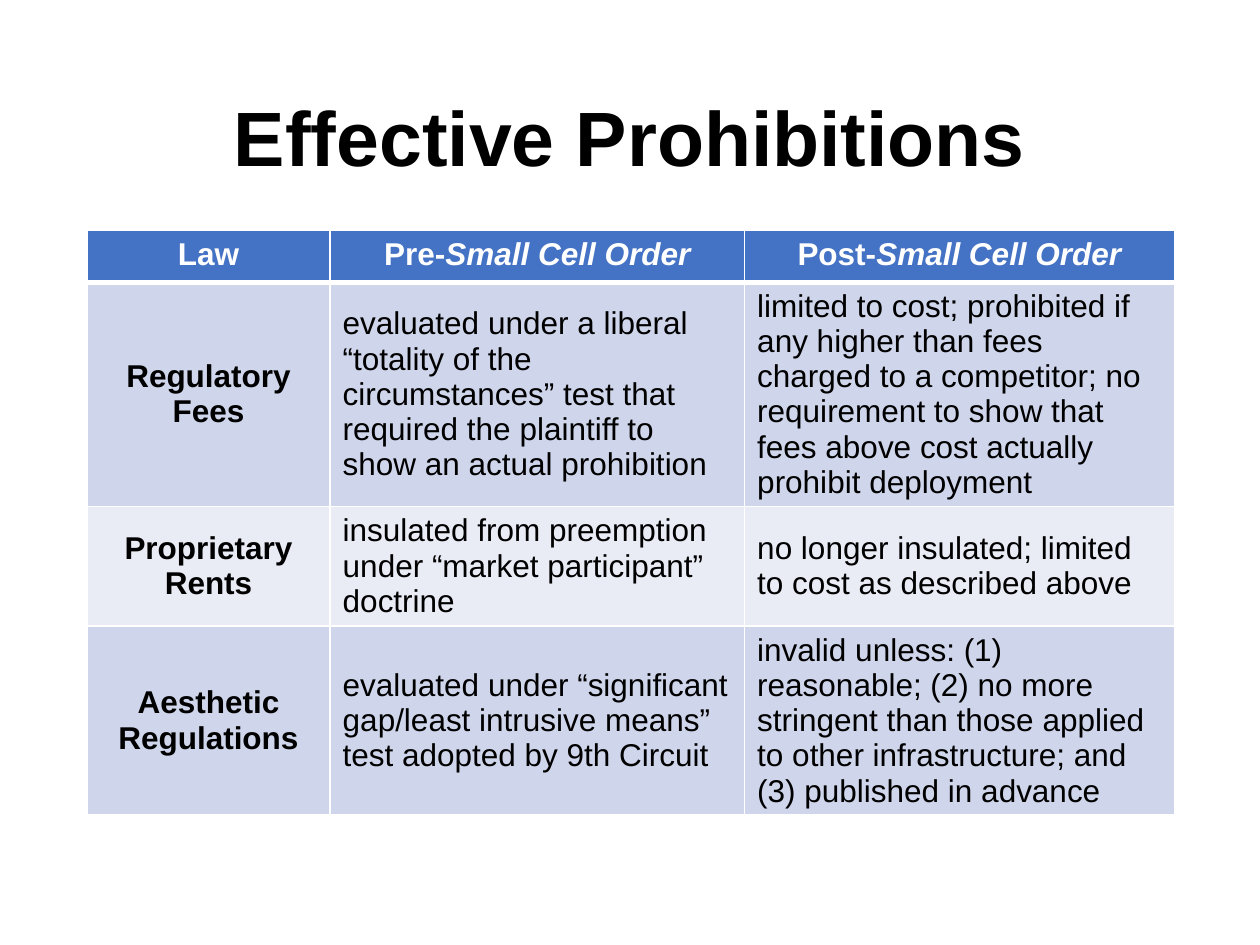
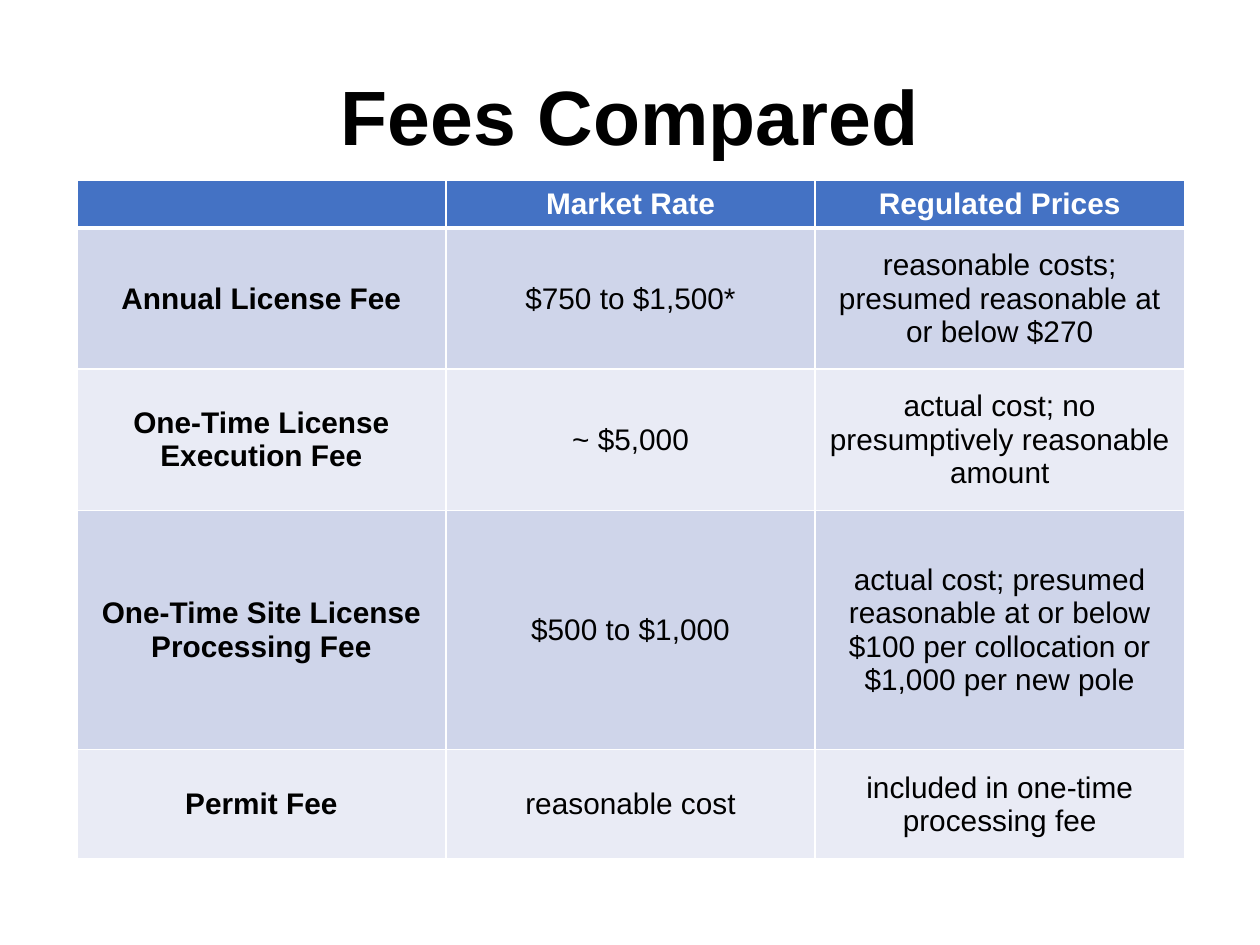
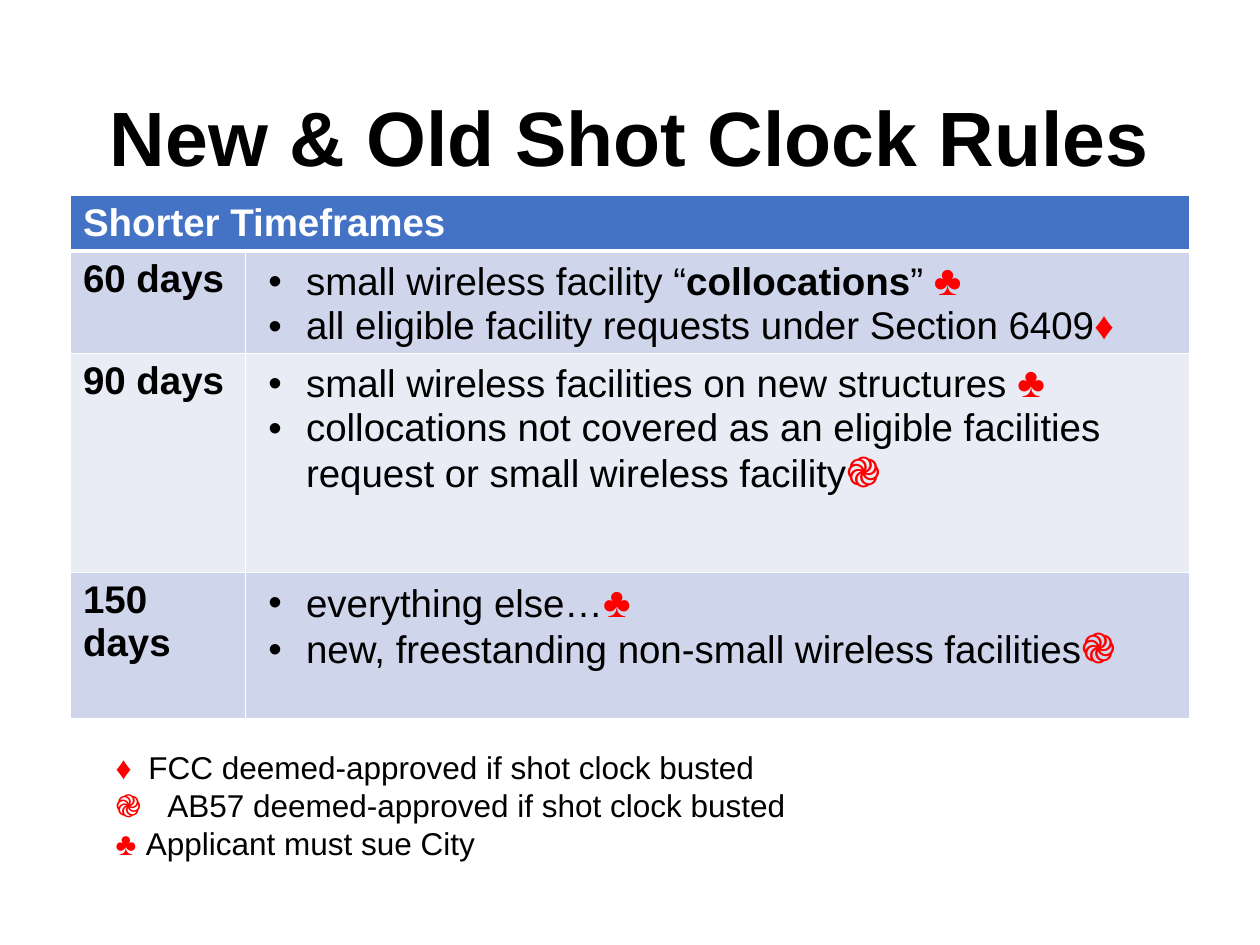
from lxml import etree
from pptx import Presentation
from pptx.dml.color import RGBColor
from pptx.enum.text import MSO_ANCHOR as Anchor, MSO_AUTO_SIZE as Fit, PP_ALIGN as Align
from pptx.oxml.ns import qn
from pptx.util import Inches, Pt

BLACK = RGBColor(0x00, 0x00, 0x00)
WHITE = RGBColor(0xFF, 0xFF, 0xFF)
RED = RGBColor(0xFF, 0x00, 0x00)
BLUE = RGBColor(0x44, 0x72, 0xC4)
BANDS = RGBColor(0xCF, 0xD5, 0xEA), RGBColor(0xE9, 0xEB, 0xF5)
FONT = "Arial"

# A text is a string, or a list of strings and (string, format) runs.
ITALIC = {"italic": True}
BOLD = {"bold": True}
MARK = {"bold": True, "size": Pt(24), "color": RED}
SMALL = {"bold": True, "color": RED}
CLUB, STAR, GEM = ("♣", MARK), ("֎", MARK), ("♦", SMALL)

LAWS = [
    ("Law", ["Pre-", ("Small Cell Order", ITALIC)], ["Post-", ("Small Cell Order", ITALIC)]),
    ("Regulatory Fees",
     "evaluated under a liberal “totality of the circumstances” test that required "
     "the plaintiff to show an actual prohibition",
     "limited to cost; prohibited if any higher than fees charged to a competitor; "
     "no requirement to show that fees above cost actually prohibit deployment"),
    ("Proprietary Rents",
     "insulated from preemption under “market participant” doctrine",
     "no longer insulated; limited to cost as described above"),
    ("Aesthetic Regulations",
     "evaluated under “significant gap/least intrusive means” test adopted by 9th Circuit",
     "invalid unless: (1) reasonable; (2) no more stringent than those applied to "
     "other infrastructure; and (3) published in advance"),
]
FEES = [
    ("", "Market Rate", "Regulated Prices"),
    ("Annual License Fee", "$750 to $1,500*",
     "reasonable costs; presumed reasonable at or below $270"),
    ("One-Time License Execution Fee", "~ $5,000",
     "actual cost; no presumptively reasonable amount"),
    ("One-Time Site License Processing Fee", "$500 to $1,000",
     "actual cost; presumed reasonable at or below $100 per collocation "
     "or $1,000 per new pole"),
    ("Permit Fee", "reasonable cost", "included in one-time processing fee"),
]
# Each right-hand cell holds a tuple of bullets.
CLOCKS = [
    ("Shorter Timeframes", ""),
    ("60 days", (["small wireless facility “", ("collocations", BOLD), "” ", CLUB],
                 ["all eligible facility requests under Section 6409", GEM])),
    ("90 days", (["small wireless facilities on new structures ", CLUB],
                 ["collocations not covered as an eligible facilities request "
                  "or small wireless facility", STAR])),
    ("150 days", (["everything else…", CLUB],
                  ["new, freestanding non-small wireless facilities", STAR])),
]
# Mark, tab stop in inches, meaning
LEGEND = [
    ("♦", 0.26, "FCC deemed-approved if shot clock busted"),
    ("֎", 0.41, "AB57 deemed-approved if shot clock busted"),
    ("♣", 0.24, "Applicant must sue City"),
]
SLIDES = [
    {"title": "Effective Prohibitions", "top": 0.4, "data": LAWS, "at": (0.69, 1.83),
     "cols": (1.93, 3.29, 3.41), "rows": (0.41, 1.78, 0.95, 1.49), "size": 18,
     "anchor": Anchor.MIDDLE, "aligns": (Align.CENTER, Align.LEFT, Align.LEFT),
     "head": (Anchor.TOP, Align.CENTER)},
    {"title": "Fees Compared", "top": 0.23, "data": FEES, "at": (0.61, 1.43),
     "cols": (2.93,) * 3, "rows": (0.38, 1.12, 1.12, 1.9, 0.87), "size": 17,
     "anchor": Anchor.MIDDLE, "aligns": (Align.CENTER,) * 3,
     "head": (Anchor.MIDDLE, Align.CENTER)},
    {"title": "New & Old Shot Clock Rules", "top": 0.4, "data": CLOCKS, "at": (0.56, 1.55),
     "cols": (1.39, 7.49), "rows": (0.43, 0.81, 1.74, 1.16), "size": 22,
     "anchor": Anchor.TOP, "aligns": (Align.LEFT,) * 2,
     "head": (Anchor.TOP, Align.LEFT), "merge": True, "legend": LEGEND},
]


def write(para, text, **base):
    for part in [text] if isinstance(text, str) else text:
        words, extra = (part, {}) if isinstance(part, str) else part
        run = para.add_run()
        run.text = words
        look = {"name": FONT, "bold": False, "color": BLACK, **base, **extra}
        run.font.color.rgb = look.pop("color")
        for key, value in look.items():
            setattr(run.font, key, value)


def add_bullet(para):
    props = para._p.get_or_add_pPr()
    props.set("marL", str(Inches(0.38)))
    props.set("indent", str(Inches(-0.3)))
    etree.SubElement(props, qn("a:buFont"), typeface=FONT)
    etree.SubElement(props, qn("a:buChar"), char="•")


def add_tab(para, stop):
    tabs = etree.SubElement(para._p.get_or_add_pPr(), qn("a:tabLst"))
    etree.SubElement(tabs, qn("a:tab"), pos=str(Inches(stop)), algn="l")


def edge(cell, row):
    """Rule the cell in white, thicker under the header."""
    props = cell._tc.get_or_add_tcPr()
    widths = {"L": 1, "R": 1, "T": 3 if row == 1 else 1, "B": 1 if row else 3}
    for side, width in widths.items():
        line = etree.SubElement(props, qn("a:ln" + side), w=str(Pt(width)))
        fill = etree.SubElement(line, qn("a:solidFill"))
        etree.SubElement(fill, qn("a:srgbClr"), val=str(WHITE))


def add_title(slide, text, top):
    title = slide.shapes.title
    title.left, title.top = Inches(0.69), Inches(top)
    title.width, title.height = Inches(8.62), Inches(1.45)
    frame = title.text_frame
    frame.auto_size, frame.vertical_anchor = Fit.NONE, Anchor.MIDDLE
    para = frame.paragraphs[0]
    para.alignment, para.line_spacing = Align.CENTER, 0.9
    write(para, text, size=Pt(44), bold=True)


def fill_cell(cell, content, row, col, plan):
    edge(cell, row)
    cell.fill.solid()
    cell.fill.fore_color.rgb = BANDS[(row - 1) % 2] if row else BLUE
    anchor, align = plan["head"] if row == 0 else (plan["anchor"], plan["aligns"][col])
    cell.vertical_anchor = anchor
    listed = isinstance(content, tuple)
    for i, text in enumerate(content if listed else [content]):
        para = cell.text_frame.add_paragraph() if i else cell.text_frame.paragraphs[0]
        if listed:
            add_bullet(para)
        para.alignment = align
        write(para, text, size=Pt(plan["size"]), bold=row == 0 or col == 0,
              color=BLACK if row else WHITE)


def add_grid(slide, plan):
    cols, rows = plan["cols"], plan["rows"]
    box = [Inches(n) for n in (*plan["at"], sum(cols), sum(rows))]
    table = slide.shapes.add_table(len(rows), len(cols), *box).table
    for col, width in zip(table.columns, cols):
        col.width = Inches(width)
    for row, height in zip(table.rows, rows):
        row.height = Inches(height)
    for r, line in enumerate(plan["data"]):
        for c, content in enumerate(line):
            fill_cell(table.cell(r, c), content, r, c, plan)
    if plan.get("merge"):
        table.cell(0, 0).merge(table.cell(0, len(cols) - 1))


def add_legend(slide, items):
    box = slide.shapes.add_textbox(*[Inches(n) for n in (0.82, 5.89, 5.6, 1.01)])
    frame = box.text_frame
    frame.word_wrap = False
    for i, (mark, stop, text) in enumerate(items):
        para = frame.add_paragraph() if i else frame.paragraphs[0]
        add_tab(para, stop)
        write(para, [(mark + "\t", SMALL), text], size=Pt(18))


def main():
    deck = Presentation()
    deck.slide_width, deck.slide_height = Inches(10), Inches(7.5)
    for plan in SLIDES:
        slide = deck.slides.add_slide(deck.slide_layouts[5])
        add_title(slide, plan["title"], plan["top"])
        add_grid(slide, plan)
        if "legend" in plan:
            add_legend(slide, plan["legend"])
    deck.save("out.pptx")


if __name__ == "__main__":
    main()
